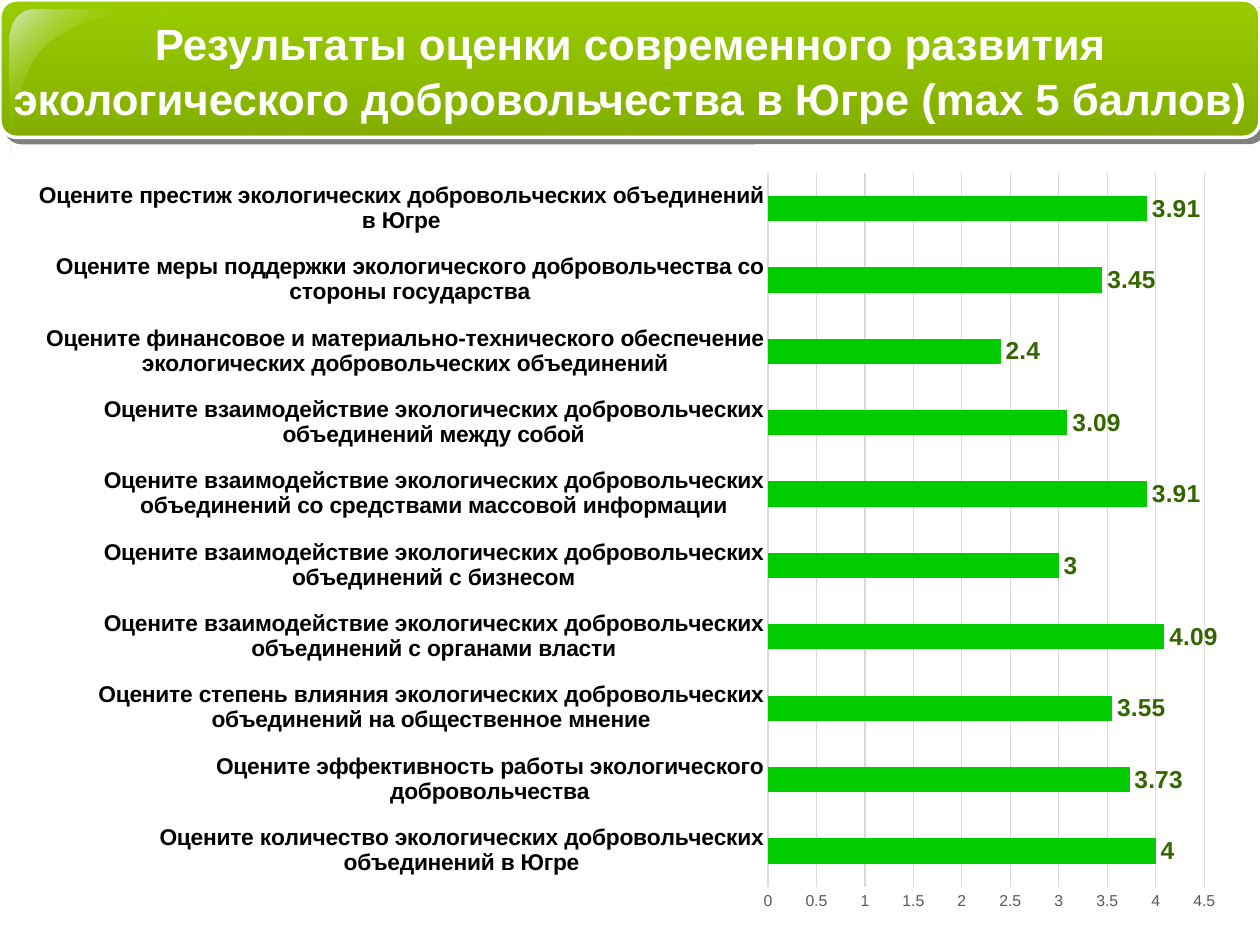
from dataclasses import dataclass

from pptx import Presentation
from pptx.chart.data import CategoryChartData
from pptx.dml.color import RGBColor
from pptx.enum.chart import XL_CHART_TYPE, XL_LABEL_POSITION, XL_TICK_MARK
from pptx.enum.shapes import MSO_SHAPE
from pptx.enum.text import MSO_ANCHOR, MSO_AUTO_SIZE, PP_ALIGN
from pptx.oxml import parse_xml
from pptx.oxml.ns import nsdecls, qn
from pptx.util import Cm, Pt

BAR = XL_CHART_TYPE.BAR_CLUSTERED
OUTSIDE = XL_LABEL_POSITION.OUTSIDE_END
NO_TICK = XL_TICK_MARK.NONE
ROUND = MSO_SHAPE.ROUNDED_RECTANGLE
CENTER = PP_ALIGN.CENTER
MIDDLE = MSO_ANCHOR.MIDDLE
GROW = MSO_AUTO_SIZE.SHAPE_TO_FIT_TEXT


@dataclass(frozen=True)
class Theme:
    """Colours, font and type sizes of the slide."""
    font: str = "Arial"
    white: str = "FFFFFF"
    black: str = "000000"
    edge: str = "FEFEFE"
    lime: str = "99CC00"
    olive: str = "83AE00"
    gloss: str = "D5E8BF"
    bar: str = "00CC00"
    value: str = "336600"
    grid: str = "D9D9D9"
    scale: str = "595959"
    title_size: int = 25
    value_size: int = 14
    label_size: int = 13
    base_size: int = 10
    scale_size: int = 9


THEME = Theme()
TITLE = ("Результаты оценки современного развития "
         "экологического добровольчества в Югре (max 5 баллов)")
SCORES = [
    ("Оцените количество экологических добровольческих объединений в Югре", 4),
    ("Оцените эффективность работы экологического добровольчества", 3.73),
    ("Оцените степень влияния экологических добровольческих объединений на общественное мнение", 3.55),
    ("Оцените взаимодействие экологических добровольческих объединений с органами власти", 4.09),
    ("Оцените взаимодействие экологических добровольческих объединений с бизнесом", 3),
    ("Оцените взаимодействие экологических добровольческих объединений со средствами массовой информации", 3.91),
    ("Оцените взаимодействие экологических добровольческих объединений между собой", 3.09),
    ("Оцените финансовое и материально-технического обеспечение экологических добровольческих объединений", 2.4),
    ("Оцените меры поддержки экологического добровольчества со стороны государства", 3.45),
    ("Оцените престиж экологических добровольческих объединений в Югре", 3.91),
]


def style_font(font, size, color, bold=False):
    """Set face, size, colour and weight of a font."""
    font.name = THEME.font
    font.size = Pt(size)
    font.bold = bold
    font.color.rgb = RGBColor.from_string(color)


def style_line(line, color, width):
    """Set colour and width of a line."""
    line.color.rgb = RGBColor.from_string(color)
    line.width = Pt(width)


def fill_blend(shape, stops, angle):
    """Fill a shape with (place, colour, opacity) gradient stops."""
    marks = "".join(
        f'<a:gs pos="{place * 1000}"><a:srgbClr val="{color}">'
        f'<a:alpha val="{alpha * 1000}"/></a:srgbClr></a:gs>'
        for place, color, alpha in stops)
    shape.fill.background()
    props = shape.element.spPr
    props.replace(props.find(qn("a:noFill")), parse_xml(
        f'<a:gradFill {nsdecls("a")} rotWithShape="1"><a:gsLst>{marks}</a:gsLst>'
        f'<a:lin ang="{angle * 60000}" scaled="1"/></a:gradFill>'))


def add_band(slide):
    """Add the rounded title band with its hard shadow."""
    band = slide.shapes.add_shape(ROUND, 0, 0, Cm(25.4), Cm(2.77))
    band.adjustments[0] = 0.12
    fill_blend(band, [(0, THEME.lime, 100), (100, THEME.olive, 100)], 90)
    style_line(band.line, THEME.edge, 2)
    band.shadow.inherit = False
    band.element.spPr.find(qn("a:effectLst")).append(parse_xml(
        f'<a:outerShdw {nsdecls("a")} blurRad="0" dist="{Pt(4.2)}" dir="2700000" '
        f'algn="ctr" rotWithShape="0"><a:srgbClr val="{THEME.black}">'
        '<a:alpha val="50000"/></a:srgbClr></a:outerShdw>'))


def trace_curve(start, pull, push, end, steps=12):
    """Return points along a cubic curve, without its start."""
    def blend(t, a, b, c, d):
        s = 1 - t
        return s**3 * a + 3 * s * s * t * b + 3 * s * t * t * c + t**3 * d

    return [tuple(Cm(blend(i / steps, *axis))
                  for axis in zip(start, pull, push, end))
            for i in range(1, steps + 1)]


def add_gloss(slide):
    """Add the curved highlight at the corner of the band."""
    top, side, foot = (0.66, 0.2), (0.2, 0.79), (0.2, 3.12)
    bend, tip = (0.81, 1.07), (2.49, 0.2)
    points = trace_curve(top, (0.41, 0.2), (0.2, 0.46), side)
    points.append((Cm(foot[0]), Cm(foot[1])))
    points += trace_curve(foot, (0.3, 3.18), (0.25, 1.73), bend)
    points += trace_curve(bend, (1.4, 0.38), (2.51, 0.33), tip)
    pen = slide.shapes.build_freeform(Cm(top[0]), Cm(top[1]))
    pen.add_line_segments(points, close=True)
    gloss = pen.convert_to_shape()
    fill_blend(gloss, [(0, THEME.gloss, 100), (50, THEME.lime, 0),
                       (100, THEME.gloss, 100)], 45)
    gloss.line.fill.background()
    gloss.shadow.inherit = False


def place_title(slide):
    """Place the title over the band."""
    title = slide.shapes.title
    title.left, title.top = Cm(0), Cm(0.2)
    title.width, title.height = Cm(25.4), Cm(2.39)
    frame = title.text_frame
    frame.text = TITLE
    frame.word_wrap = True
    frame.auto_size = GROW
    frame.vertical_anchor = MIDDLE
    frame.margin_left = frame.margin_right = Cm(0.15)
    para = frame.paragraphs[0]
    para.alignment = CENTER
    para.line_spacing = 1.05
    style_font(para.runs[0].font, THEME.title_size, THEME.white, True)
    title.element.getparent().append(title.element)


def style_axes(chart):
    """Format the question axis and the score axis."""
    names, scale = chart.category_axis, chart.value_axis
    for axis in (names, scale):
        axis.major_tick_mark = axis.minor_tick_mark = NO_TICK
    style_font(names.tick_labels.font, THEME.label_size, THEME.black, True)
    style_line(names.format.line, THEME.grid, 0.75)
    style_font(scale.tick_labels.font, THEME.scale_size, THEME.scale)
    scale.minimum_scale, scale.maximum_scale = 0, 4.5
    scale.major_unit = 0.5
    scale.format.line.fill.background()
    style_line(scale.major_gridlines.format.line, THEME.grid, 0.75)


def frame_plot(chart):
    """Fix the inner plot area and a half-clear white backing."""
    sizes = {"x": 0.61, "y": 0.02, "w": 0.36, "h": 0.93}
    parts = "".join(f'<c:{key}Mode val="edge"/>' for key in "xy")
    parts += "".join(f'<c:{key} val="{size}"/>' for key, size in sizes.items())
    area = chart.element.find(qn("c:chart")).find(qn("c:plotArea"))
    for old in area.findall(qn("c:layout")):
        area.remove(old)
    area.insert(0, parse_xml(
        f'<c:layout {nsdecls("c")}><c:manualLayout><c:layoutTarget val="inner"/>'
        f'{parts}</c:manualLayout></c:layout>'))
    chart.element.find(qn("c:chart")).addnext(parse_xml(
        f'<c:spPr {nsdecls("c", "a")}><a:solidFill><a:srgbClr val="{THEME.white}">'
        '<a:alpha val="50000"/></a:srgbClr></a:solidFill>'
        '<a:ln><a:noFill/></a:ln></c:spPr>'))


def add_scores(slide):
    """Add the bar chart of mean scores."""
    data = CategoryChartData()
    data.categories = [name for name, score in SCORES]
    data.add_series("Series 1", [score for name, score in SCORES])
    chart = slide.shapes.add_chart(
        BAR, Cm(0.58), Cm(3.18), Cm(24.43), Cm(15.47), data).chart
    chart.has_legend = chart.has_title = False
    style_font(chart.font, THEME.base_size, THEME.black)
    style_axes(chart)
    plot = chart.plots[0]
    plot.gap_width = 182
    plot.vary_by_categories = False
    series = plot.series[0]
    series.format.fill.solid()
    series.format.fill.fore_color.rgb = RGBColor.from_string(THEME.bar)
    labels = series.data_labels
    labels.show_value = True
    labels.position = OUTSIDE
    style_font(labels.font, THEME.value_size, THEME.value, True)
    frame_plot(chart)


def main():
    """Build and save the slide."""
    deck = Presentation()
    deck.slide_width, deck.slide_height = Cm(25.4), Cm(19.05)
    slide = deck.slides.add_slide(deck.slide_layouts[5])
    add_band(slide)
    add_gloss(slide)
    place_title(slide)
    add_scores(slide)
    deck.save("out.pptx")


if __name__ == "__main__":
    main()
